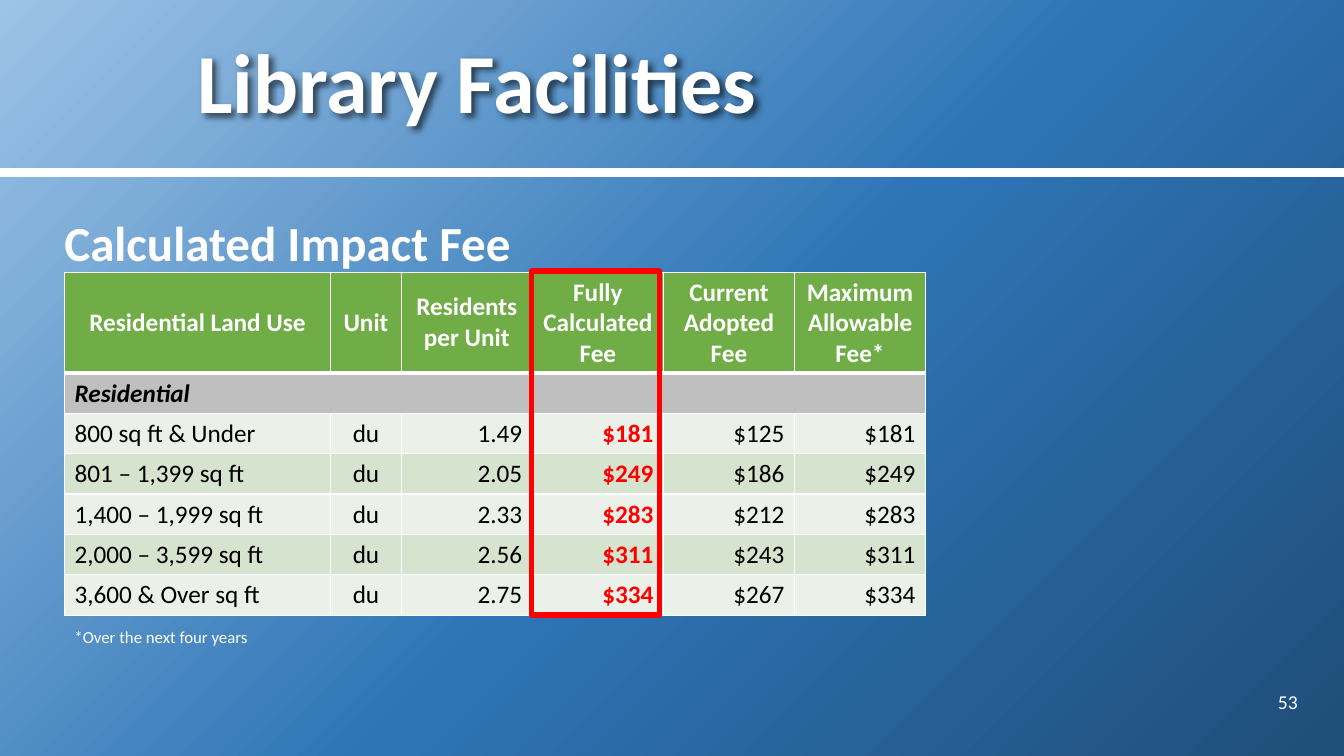
from lxml import etree
from pptx import Presentation
from pptx.dml.color import RGBColor
from pptx.enum.shapes import MSO_CONNECTOR as Connector, MSO_SHAPE as Shape
from pptx.enum.text import MSO_ANCHOR as Anchor, MSO_AUTO_SIZE as AutoSize, PP_ALIGN as Align
from pptx.oxml import parse_xml
from pptx.oxml.ns import nsdecls, qn
from pptx.util import Inches, Pt

WHITE = RGBColor(0xFF, 0xFF, 0xFF)
BLACK = RGBColor(0, 0, 0)
RED = RGBColor(0xFF, 0, 0)
GREEN = RGBColor(0x70, 0xAD, 0x47)
GRAY = RGBColor(0xBF, 0xBF, 0xBF)
BANDS = (RGBColor(0xEB, 0xF1, 0xE9), RGBColor(0xD5, 0xE3, 0xCF))
SKY = RGBColor(0x9D, 0xC3, 0xE6)
BLUE = RGBColor(0x2E, 0x75, 0xB6)
NAVY = RGBColor(0x1F, 0x4E, 0x79)
FONT = "Calibri"

HEADERS = ("Residential Land Use", "Unit", "Residents per Unit",
           "Fully Calculated Fee", "Current Adopted Fee", "Maximum Allowable Fee*")
FEES = (
    ("800 sq ft & Under", "du", "1.49", "$181", "$125", "$181"),
    ("801 – 1,399 sq ft", "du", "2.05", "$249", "$186", "$249"),
    ("1,400 – 1,999 sq ft", "du", "2.33", "$283", "$212", "$283"),
    ("2,000 – 3,599 sq ft", "du", "2.56", "$311", "$243", "$311"),
    ("3,600 & Over sq ft", "du", "2.75", "$334", "$267", "$334"),
)
WIDTHS = (2.64, 0.7, 1.3, 1.3, 1.3, 1.3)
ALIGNS = (Align.LEFT, Align.CENTER) + (Align.RIGHT,) * 4
FULL_FEE = 3  # column of the fully calculated fee


def set_background(page):
    """Fill the page with a gradient spreading from its top left corner."""
    page.background.fill.solid()
    properties = page.background._cSld.bg.bgPr
    stops = "".join(
        f'<a:gs pos="{percent * 1000}"><a:srgbClr val="{color}"/></a:gs>'
        for percent, color in ((0, SKY), (53, BLUE), (100, NAVY)))
    gradient = parse_xml(
        f'<a:gradFill {nsdecls("a")} rotWithShape="1"><a:gsLst>{stops}</a:gsLst>'
        '<a:path path="circle"><a:fillToRect r="100000" b="100000"/></a:path></a:gradFill>')
    properties.replace(properties.find(qn("a:solidFill")), gradient)


def style_text(para, size, color, bold=False, italic=False, align=Align.LEFT):
    para.alignment = align
    font = para.font
    font.name, font.size = FONT, Pt(size)
    font.bold, font.italic = bold, italic
    font.color.rgb = color


def add_text(page, text, left, top, width, height, size, bold=False,
             align=Align.LEFT, anchor=Anchor.TOP, spacing=1.0):
    box = page.shapes.add_textbox(Inches(left), Inches(top), Inches(width), Inches(height))
    frame = box.text_frame
    frame.word_wrap = True
    frame.vertical_anchor = anchor
    para = frame.paragraphs[0]
    para.text = text
    para.line_spacing = spacing
    style_text(para, size, WHITE, bold, align=align)
    return box


def add_shadow(box):
    box._element.spPr.append(parse_xml(
        f'<a:effectLst {nsdecls("a")}><a:outerShdw blurRad="50800" dist="38100" '
        'dir="2700000" algn="tl" rotWithShape="0"><a:srgbClr val="000000">'
        '<a:alpha val="60000"/></a:srgbClr></a:outerShdw></a:effectLst>'))


def add_rule(page, left, right, top):
    rule = page.shapes.add_connector(
        Connector.STRAIGHT, Inches(left), Inches(top), Inches(right), Inches(top))
    rule.line.color.rgb = WHITE
    rule.line.width = Pt(6)
    etree.SubElement(rule._element.spPr, qn("a:effectLst"))


def style_cell(cell, fill, bottom=1):
    """Set the white borders and the fill of a table cell."""
    properties = cell._tc.get_or_add_tcPr()
    for side, points in (("L", 1), ("R", 1), ("T", 1), ("B", bottom)):
        properties.append(parse_xml(
            f'<a:ln{side} {nsdecls("a")} w="{Pt(points)}"><a:solidFill>'
            f'<a:srgbClr val="{WHITE}"/></a:solidFill></a:ln{side}>'))
    cell.fill.solid()
    cell.fill.fore_color.rgb = fill
    cell.vertical_anchor = Anchor.MIDDLE


def write_cell(cell, text, color, **style):
    para = cell.text_frame.paragraphs[0]
    para.text = text
    style_text(para, 18, color, **style)


def add_fee_table(page):
    frame = page.shapes.add_table(
        len(FEES) + 2, len(WIDTHS), Inches(0.64), Inches(2.7),
        Inches(sum(WIDTHS)), Inches(3.4))
    table = frame.table
    for column, width in zip(table.columns, WIDTHS):
        column.width = Inches(width)
    for index, row in enumerate(table.rows):
        row.height = Inches(0.4 if index else 1.0)

    # Header and section rows
    for column, header in enumerate(HEADERS):
        style_cell(table.cell(0, column), GREEN, bottom=3)
        write_cell(table.cell(0, column), header, WHITE, bold=True, align=Align.CENTER)
        style_cell(table.cell(1, column), GRAY)
    table.cell(1, 0).merge(table.cell(1, len(WIDTHS) - 1))
    write_cell(table.cell(1, 0), "Residential", BLACK, bold=True, italic=True)

    # Fees by home size
    for index, values in enumerate(FEES):
        for column, value in enumerate(values):
            cell = table.cell(index + 2, column)
            full = column == FULL_FEE
            style_cell(cell, BANDS[index % 2])
            write_cell(cell, value, RED if full else BLACK, bold=full, align=ALIGNS[column])


def add_highlight(page, left, top, width, height):
    highlight = page.shapes.add_shape(
        Shape.RECTANGLE, Inches(left), Inches(top), Inches(width), Inches(height))
    highlight.shadow.inherit = False
    highlight.fill.background()
    highlight.line.color.rgb = RED
    highlight.line.width = Pt(4)


def main():
    deck = Presentation()
    deck.slide_width, deck.slide_height = Inches(13.33), Inches(7.5)
    page = deck.slides.add_slide(deck.slide_layouts[6])
    set_background(page)

    # Title band
    add_rule(page, -0.02, 13.33, 1.71)
    title = add_text(page, "Library Facilities", 1.86, 0, 11.1, 1.71, 60,
                     bold=True, anchor=Anchor.MIDDLE, spacing=0.9)
    add_shadow(title)
    add_text(page, "53", 12.08, 6.76, 0.89, 0.4, 14, align=Align.RIGHT, anchor=Anchor.MIDDLE)

    # Fee table with its heading, highlight and footnote
    add_text(page, "Calculated Impact Fee", 0.54, 1.94, 12.42, 5.27, 35, bold=True, spacing=1.2)
    add_fee_table(page)
    add_highlight(page, 5.27, 2.69, 1.27, 3.41)
    note = add_text(page, "*Over the next four years", 0.64, 6.17, 10.98, 0.3, 12)
    note.text_frame.auto_size = AutoSize.SHAPE_TO_FIT_TEXT

    deck.save("out.pptx")


if __name__ == "__main__":
    main()
